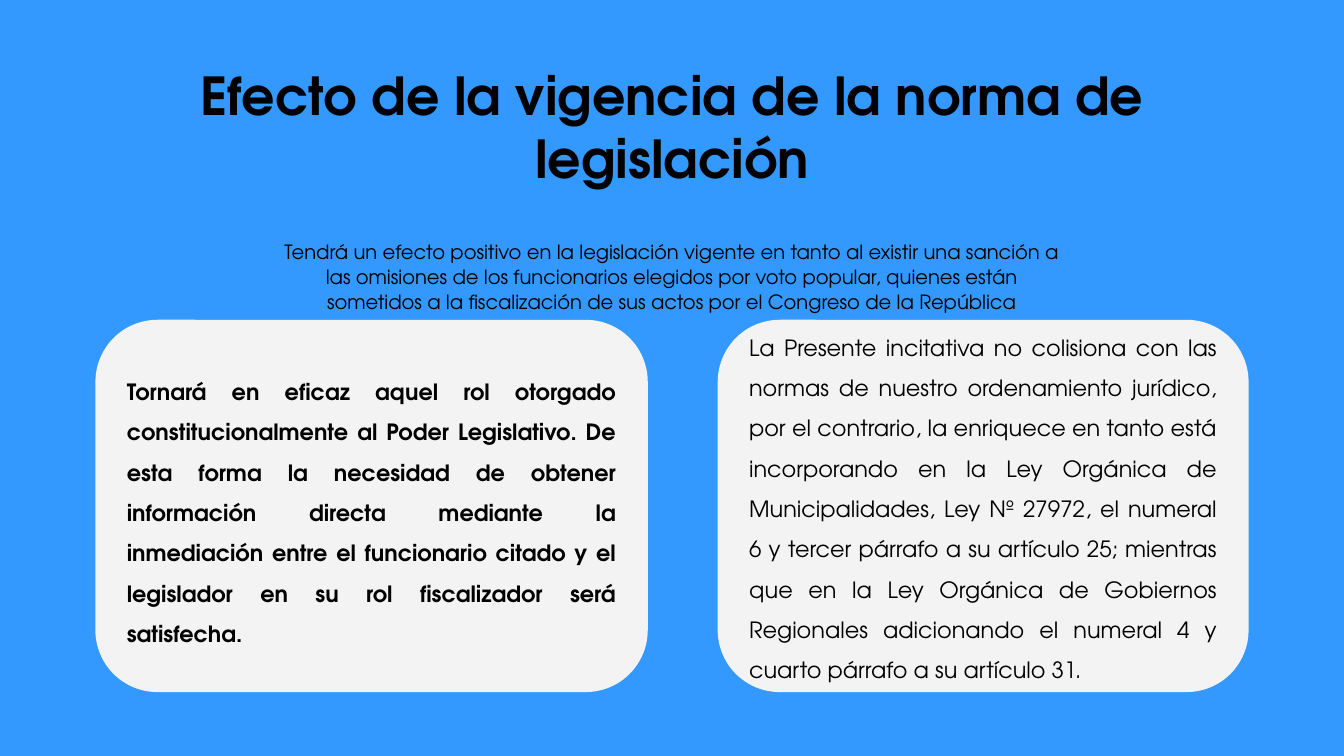
from pptx import Presentation
from pptx.dml.color import RGBColor
from pptx.enum.shapes import MSO_SHAPE as Shape
from pptx.enum.text import MSO_ANCHOR as Anchor, PP_ALIGN as Align
from pptx.util import Inches, Pt

COLORS = {"background": "3399FF", "card": "F3F3F3", "text": "000000"}
FONT = "TeX Gyre Adventor"


def write_text(shape, text, size, bold, align, anchor, inset):
    frame = shape.text_frame
    frame.word_wrap = True
    frame.vertical_anchor = anchor
    frame.margin_left = frame.margin_right = Inches(0.1)
    frame.margin_top = frame.margin_bottom = Inches(inset)
    frame.text = text
    paragraph = frame.paragraphs[0]
    paragraph.alignment = align
    font = paragraph.runs[0].font
    font.name = FONT
    font.size = Pt(size)
    font.bold = bold
    font.color.rgb = RGBColor.from_string(COLORS["text"])
    return paragraph


presentation = Presentation()
presentation.slide_width = Inches(10)
presentation.slide_height = Inches(10 * 9 / 16)
slide = presentation.slides.add_slide(presentation.slide_layouts[6])
background = slide.background.fill
background.solid()
background.fore_color.rgb = RGBColor.from_string(COLORS["background"])

# Heading
title = slide.shapes.add_textbox(Inches(0.44), Inches(0.48), Inches(9.12), Inches(0.92))
write_text(title, "Efecto de la vigencia de la norma de legislación",
           28, True, Align.CENTER, Anchor.MIDDLE, 0.1)

# Introduction
introduction = slide.shapes.add_textbox(Inches(1.97), Inches(1.72), Inches(6.06), Inches(0.65))
paragraph = write_text(
    introduction,
    "Tendrá un efecto positivo en la legislación vigente en tanto al existir una sanción a "
    "las omisiones de los funcionarios elegidos por voto popular, quienes están "
    "sometidos a la fiscalización de sus actos por el Congreso de la República",
    10.5, False, Align.CENTER, Anchor.TOP, 0.05)
paragraph.line_spacing = 1.07
paragraph.space_before = paragraph.space_after = Pt(12)

# Cards: left, width, bold, bottom inset, text
cards = [
    (0.71, 4.11, True, 0.1,
     "Tornará en eficaz aquel rol otorgado constitucionalmente al Poder Legislativo. "
     "De esta forma la necesidad de obtener información directa mediante la inmediación "
     "entre el funcionario citado y el legislador en su rol fiscalizador será satisfecha."),
    (5.34, 3.95, False, 0.16,
     "La Presente incitativa no colisiona con las normas de nuestro ordenamiento jurídico, "
     "por el contrario, la enriquece en tanto está incorporando en la Ley Orgánica de "
     "Municipalidades, Ley Nº 27972, el numeral 6 y tercer párrafo a su artículo 25; "
     "mientras que en la Ley Orgánica de Gobiernos Regionales adicionando el numeral 4 "
     "y cuarto párrafo a su artículo 31."),
]
for left, width, bold, bottom_inset, text in cards:
    card = slide.shapes.add_shape(Shape.ROUNDED_RECTANGLE, Inches(left), Inches(2.38),
                                  Inches(width), Inches(2.77))
    card.shadow.inherit = False
    card.adjustments[0] = 1 / 6
    card.fill.solid()
    card.fill.fore_color.rgb = RGBColor.from_string(COLORS["card"])
    card.line.fill.background()
    paragraph = write_text(card, text, 12, bold, Align.JUSTIFY, Anchor.MIDDLE, 0.1)
    paragraph.line_spacing = 1.5
    card.text_frame.margin_bottom = Inches(bottom_inset)

presentation.save("out.pptx")
